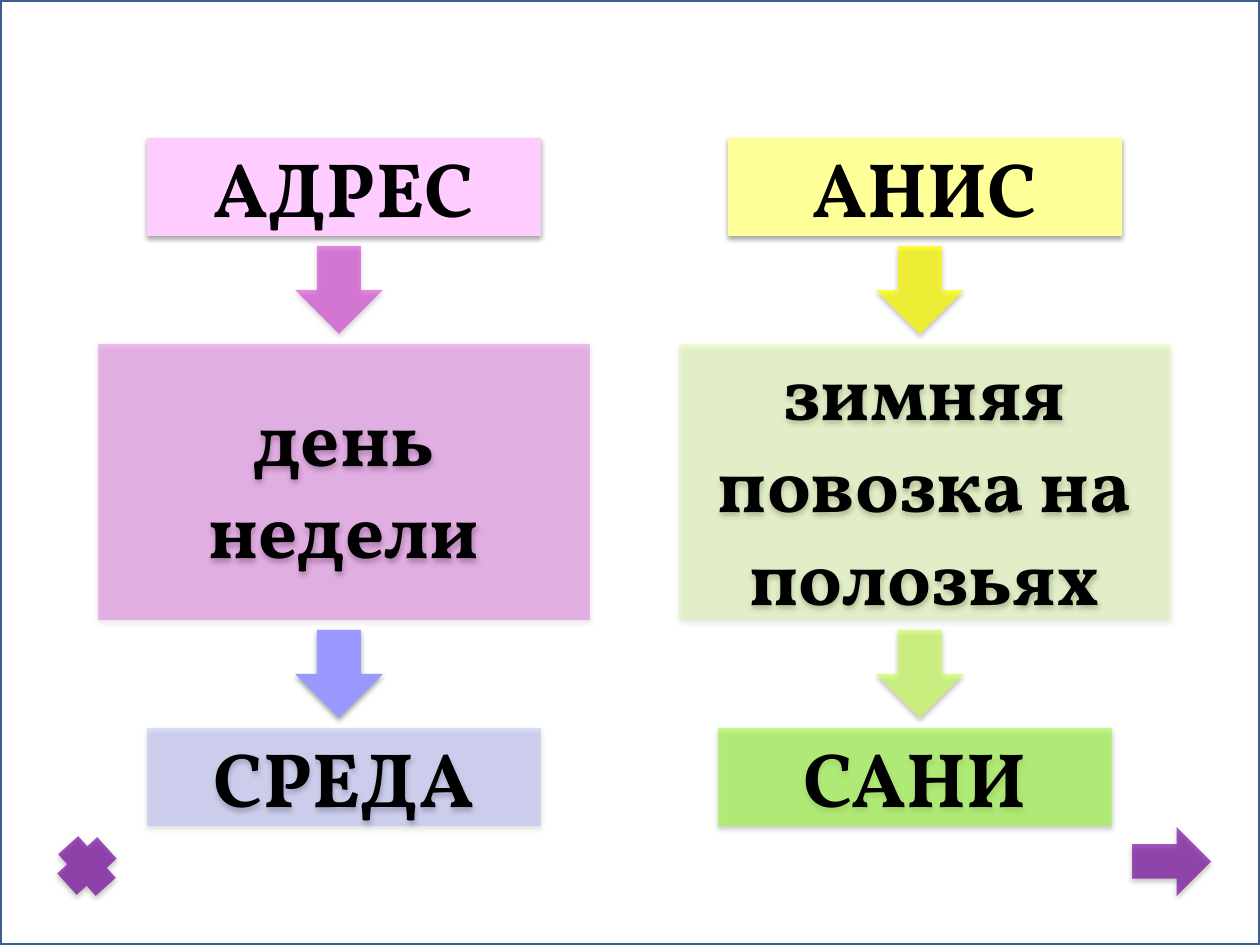
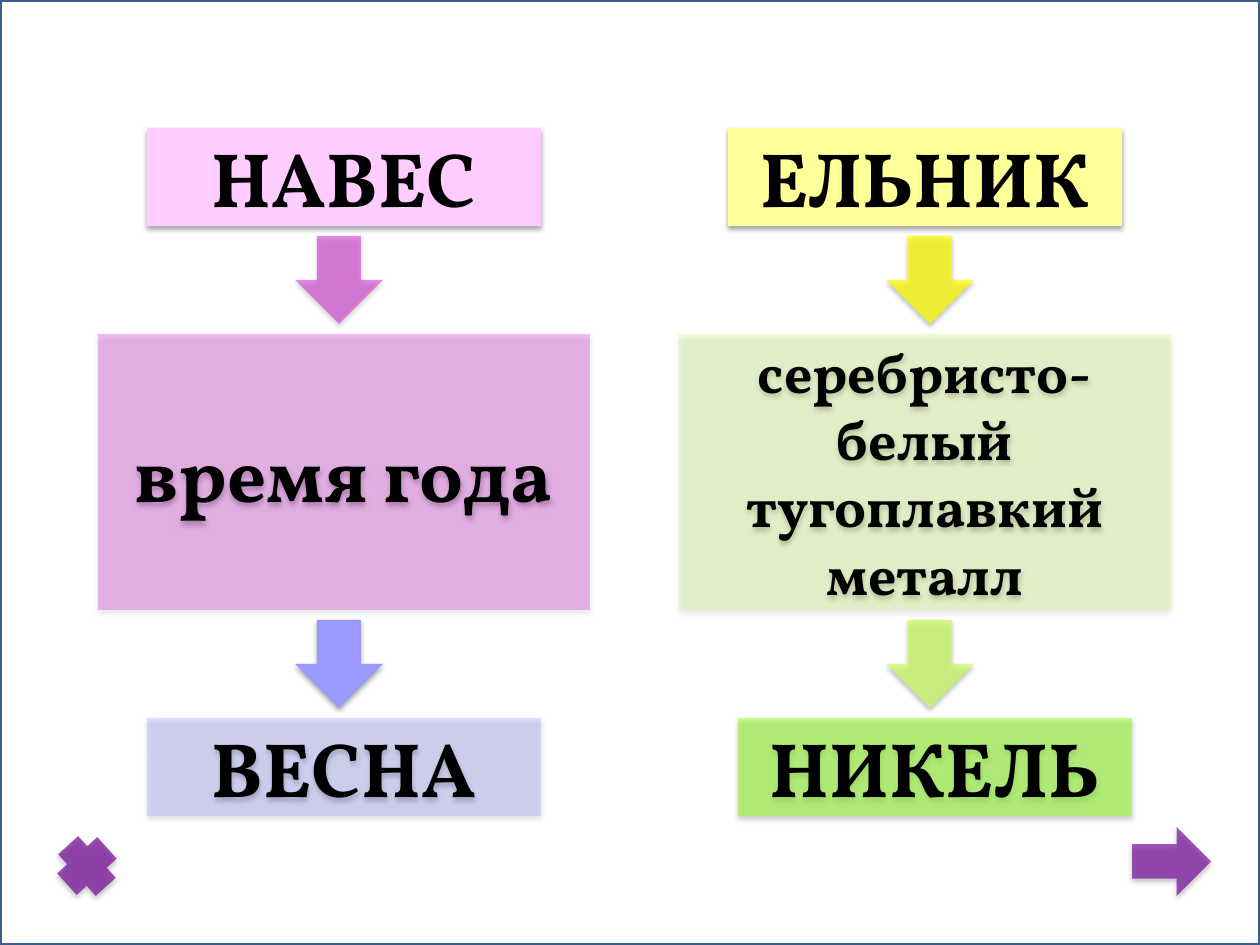
from collections import namedtuple

from lxml.etree import SubElement
from pptx import Presentation
from pptx.dml.color import RGBColor
from pptx.enum.shapes import MSO_SHAPE as Shape
from pptx.enum.text import MSO_ANCHOR as Anchor, PP_ALIGN as Align
from pptx.oxml.ns import qn
from pptx.util import Pt

PX = 9144000 / 1260
PAGE_WIDTH, PAGE_HEIGHT = 1260, 945
WORD_WIDTH, WORD_HEIGHT = 394, 98
CLUE_WIDTH, CLUE_HEIGHT = 492, 276
ARROW_SIZE, GAP = 88, 10

BLACK = RGBColor(0x00, 0x00, 0x00)
WHITE = RGBColor(0xFF, 0xFF, 0xFF)
FRAME_BLUE = RGBColor(0x3A, 0x5F, 0x8C)
PINK = RGBColor(0xFF, 0xCC, 0xFF)
MAGENTA = RGBColor(0xCC, 0x00, 0xCC)
LAVENDER = RGBColor(0x99, 0x99, 0xFF)
PALE_YELLOW = RGBColor(0xFF, 0xFF, 0x99)
YELLOW = RGBColor(0xFF, 0xFF, 0x00)
LIME = RGBColor(0xCC, 0xFF, 0x66)
GREEN = RGBColor(0x99, 0xFF, 0x33)
PURPLE = RGBColor(0x72, 0x00, 0x9A)

Chain = namedtuple("Chain", "word clue answer")
Palette = namedtuple("Palette", "word first_arrow clue second_arrow answer")
LEFT_PALETTE = Palette((PINK, 100), (MAGENTA, 45), (MAGENTA, 25),
                       (LAVENDER, 100), (LAVENDER, 31))
RIGHT_PALETTE = Palette((PALE_YELLOW, 100), (YELLOW, 72), (LIME, 25),
                        (LIME, 72), (GREEN, 56))


def px(length):
    """Turn a length in px into EMU."""
    return round(length * PX)


def add_box(page, kind, left, top, width, height, paint):
    """Add a borderless shape filled with a (colour, opacity percent) paint."""
    box = page.shapes.add_shape(kind, px(left), px(top), px(width), px(height))
    colour, opacity = paint
    box.fill.solid()
    box.fill.fore_color.rgb = colour
    if opacity < 100:
        fill_colour = box.element.spPr.find(qn("a:solidFill"))[0]
        SubElement(fill_colour, qn("a:alpha"), val=str(opacity * 1000))
    box.line.fill.background()
    box.shadow.inherit = False
    return box


def add_shadow(box):
    """Give a box the soft black shadow that falls straight down."""
    effects = box.element.spPr.find(qn("a:effectLst"))
    shadow = SubElement(effects, qn("a:outerShdw"), blurRad=str(Pt(3.1)),
                        dist=str(Pt(1.8)), dir="5400000", rotWithShape="0")
    colour = SubElement(shadow, qn("a:srgbClr"), val=str(BLACK))
    SubElement(colour, qn("a:alpha"), val="35000")


def write_text(box, text, size=44, colour=BLACK, bold=True, font="Vollkorn"):
    """Write one centred paragraph in the middle of a box."""
    frame = box.text_frame
    frame.word_wrap = True
    frame.vertical_anchor = Anchor.MIDDLE
    para = frame.paragraphs[0]
    para.alignment = Align.CENTER
    span = para.add_run()
    span.text = text
    span.font.name = font
    span.font.size = Pt(size)
    span.font.bold = bold
    span.font.color.rgb = colour


def add_card(page, left, top, width, height, paint, text, size=44):
    """Add a shadowed rectangle with text."""
    card = add_box(page, Shape.RECTANGLE, left, top, width, height, paint)
    add_shadow(card)
    write_text(card, text, size=size)


def add_arrow(page, left, top, paint):
    """Add a shadowed arrow pointing down."""
    add_shadow(add_box(page, Shape.DOWN_ARROW, left, top,
                       ARROW_SIZE, ARROW_SIZE, paint))


def add_chain(page, left, top, chain, palette, arrow_shift=0,
              answer_shift=0, clue_size=44):
    """Stack a word, its clue and its answer, with arrows between them."""
    indent = (CLUE_WIDTH - WORD_WIDTH) // 2
    arrow_left = left + 197 + arrow_shift
    add_card(page, left + indent, top, WORD_WIDTH, WORD_HEIGHT,
             palette.word, chain.word)
    top += WORD_HEIGHT + GAP
    add_arrow(page, arrow_left, top, palette.first_arrow)
    top += ARROW_SIZE + GAP
    add_card(page, left, top, CLUE_WIDTH, CLUE_HEIGHT, palette.clue,
             chain.clue, clue_size)
    top += CLUE_HEIGHT + GAP
    add_arrow(page, arrow_left, top, palette.second_arrow)
    top += ARROW_SIZE + GAP
    add_card(page, left + indent + answer_shift, top, WORD_WIDTH, WORD_HEIGHT,
             palette.answer, chain.answer)


def add_buttons(page):
    """Add the closing cross and the next arrow at the foot of the page."""
    add_shadow(add_box(page, Shape.RIGHT_ARROW, 1132, 827, 79, 69, (PURPLE, 65)))
    cross = add_box(page, Shape.CROSS, 59, 839, 56, 54, (PURPLE, 67))
    cross.rotation = 47.9
    add_shadow(cross)


def add_frame(deck, page):
    """Put the thin page frame on the slide master."""
    frame = add_box(page, Shape.RECTANGLE, 0, 0, PAGE_WIDTH, PAGE_HEIGHT, (WHITE, 28))
    frame.line.color.rgb = FRAME_BLUE
    frame.line.width = Pt(2)
    deck.slide_master.shapes.element.append(frame.element)


def add_puzzle_page(deck, top, left_chain, right_chain, **right_format):
    """Add a page with two chains side by side."""
    page = deck.slides.add_slide(deck.slide_layouts[6])
    add_chain(page, 98, top, left_chain, LEFT_PALETTE)
    add_chain(page, 679, top, right_chain, RIGHT_PALETTE, **right_format)
    add_buttons(page)
    return page


def main():
    """Build and save the deck."""
    deck = Presentation()
    deck.slide_width, deck.slide_height = px(PAGE_WIDTH), px(PAGE_HEIGHT)
    first_page = add_puzzle_page(
        deck, 138,
        Chain("АДРЕС", "день недели", "СРЕДА"),
        Chain("АНИС", "зимняя повозка на полозьях", "САНИ"),
        answer_shift=-10)
    add_frame(deck, first_page)
    add_puzzle_page(
        deck, 128,
        Chain("НАВЕС", "время года", "ВЕСНА"),
        Chain("ЕЛЬНИК", "серебристо-белый тугоплавкий металл", "НИКЕЛЬ"),
        arrow_shift=10, answer_shift=10, clue_size=32)
    deck.save("out.pptx")


if __name__ == "__main__":
    main()
